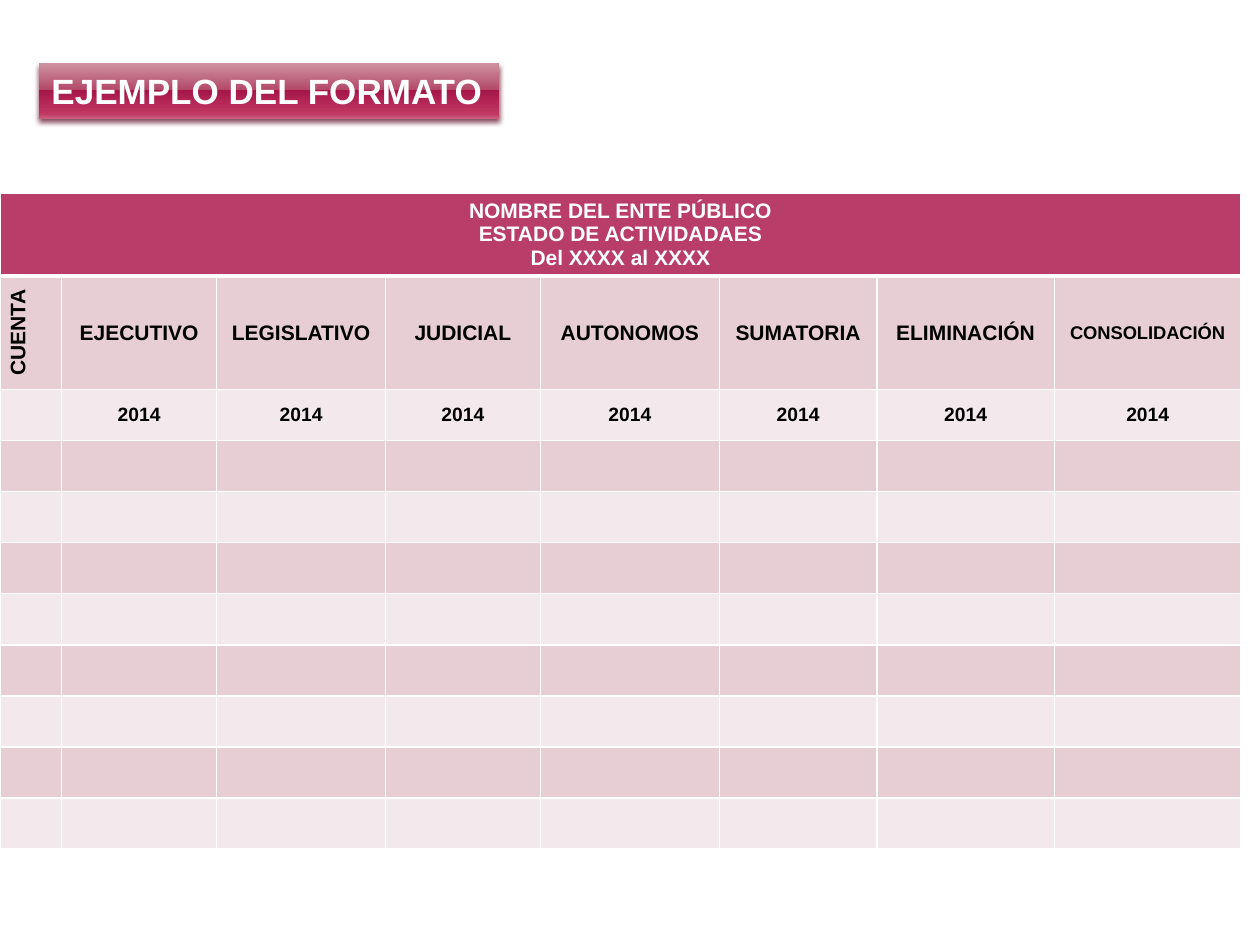
from lxml.etree import SubElement
from pptx import Presentation
from pptx.dml.color import RGBColor
from pptx.enum.shapes import MSO_SHAPE
from pptx.enum.text import MSO_ANCHOR, MSO_AUTO_SIZE, PP_ALIGN
from pptx.oxml import parse_xml
from pptx.oxml.ns import nsdecls, qn
from pptx.util import Inches, Pt

COLORS = {"white": "FFFFFF", "black": "000000", "header": "B83D68",
          "dark": "E6CED4", "light": "F3E8EB", "shadow": "722640"}
GRADIENT = [(0, "CE94A2"), (49, "B34869"), (49, "A61749"), (92, "C13764"), (100, "CA5D7C")]


def style_text(tf, size, color, align):
    for p in tf.paragraphs:
        p.alignment = align
        for r in p.runs:
            r.font.name = "Arial"
            r.font.size = Pt(size)
            r.font.bold = True
            r.font.color.rgb = RGBColor.from_string(COLORS[color])


def set_borders(cell, top, bottom):
    tcPr = cell._tc.get_or_add_tcPr()
    for i, (side, width) in enumerate([("L", 1), ("R", 1), ("T", top), ("B", bottom)]):
        ln = parse_xml(f'<a:ln{side} {nsdecls("a")} w="{Pt(width)}"/>')
        fill = SubElement(ln, qn("a:solidFill"))
        SubElement(fill, qn("a:srgbClr")).set("val", COLORS["white"])
        tcPr.insert(i, ln)


prs = Presentation()
prs.slide_width, prs.slide_height = Inches(10), Inches(7.5)
s = prs.slides.add_slide(prs.slide_layouts[6])

# Table grid: tall row of headings, equal rows below
widths = [0.49, 1.23, 1.34, 1.23, 1.42, 1.25, 1.41, 1.48]
row_h = (4.55 - 0.9) / 9
heights = [row_h, 0.9] + [row_h] * 9
frame = s.shapes.add_table(len(heights), len(widths), 0, Inches(1.53),
                           Inches(sum(widths)), Inches(sum(heights)))
table = frame.table
for col, w in zip(table.columns, widths):
    col.width = Inches(w)
for row, h in zip(table.rows, heights):
    row.height = Inches(h)

# Fills and borders
for i, row in enumerate(table.rows):
    fill = "header" if i == 0 else "dark" if i % 2 else "light"
    for cell in row.cells:
        cell.fill.solid()
        cell.fill.fore_color.rgb = RGBColor.from_string(COLORS[fill])
        set_borders(cell, 3 if i == 1 else 1, 3 if i == 0 else 1)

# Merged table title
title = table.cell(0, 0)
title.merge(table.cell(0, len(widths) - 1))
title.text_frame.text = "NOMBRE DEL ENTE PÚBLICO\nESTADO DE ACTIVIDADAES\nDel XXXX al XXXX"
style_text(title.text_frame, 12, "white", PP_ALIGN.CENTER)

# Column headings and years
headings = ["CUENTA", "EJECUTIVO", "LEGISLATIVO", "JUDICIAL", "AUTONOMOS",
            "SUMATORIA", "ELIMINACIÓN", "CONSOLIDACIÓN"]
for j, heading in enumerate(headings):
    heading_size = 10.5 if heading == "CONSOLIDACIÓN" else 12
    year = "2014" if j else ""
    for i, text, size in [(1, heading, heading_size), (2, year, 11)]:
        cell = table.cell(i, j)
        cell.vertical_anchor = MSO_ANCHOR.MIDDLE
        cell.text_frame.text = text
        style_text(cell.text_frame, size, "black", PP_ALIGN.CENTER)
table.cell(1, 0)._tc.get_or_add_tcPr().set("vert", "vert270")

# Glossy slide label
sp = s.shapes.add_shape(MSO_SHAPE.RECTANGLE, Inches(0.31), Inches(0.5), Inches(3.65), Inches(0.44))
sp.line.fill.background()
sp.shadow.inherit = False
sp.fill.gradient()
sp.fill.gradient_angle = 270
stops = sp._element.spPr.find(qn("a:gradFill")).find(qn("a:gsLst"))
for stop in list(stops):
    stops.remove(stop)
for pos, color in GRADIENT:
    stop = SubElement(stops, qn("a:gs"), pos=str(pos * 1000))
    SubElement(stop, qn("a:srgbClr"), val=color)
effects = sp._element.spPr.find(qn("a:effectLst"))
shadow = SubElement(effects, qn("a:outerShdw"), blurRad=str(Pt(3.1)), dist=str(Pt(2)),
                    dir="5400000", rotWithShape="0")
tint = SubElement(shadow, qn("a:srgbClr"), val=COLORS["shadow"])
SubElement(tint, qn("a:alpha"), val="83000")
tf = sp.text_frame
tf.word_wrap = False
tf.auto_size = MSO_AUTO_SIZE.SHAPE_TO_FIT_TEXT
tf.text = "EJEMPLO DEL FORMATO"
style_text(tf, 20, "white", PP_ALIGN.LEFT)

prs.save("out.pptx")
